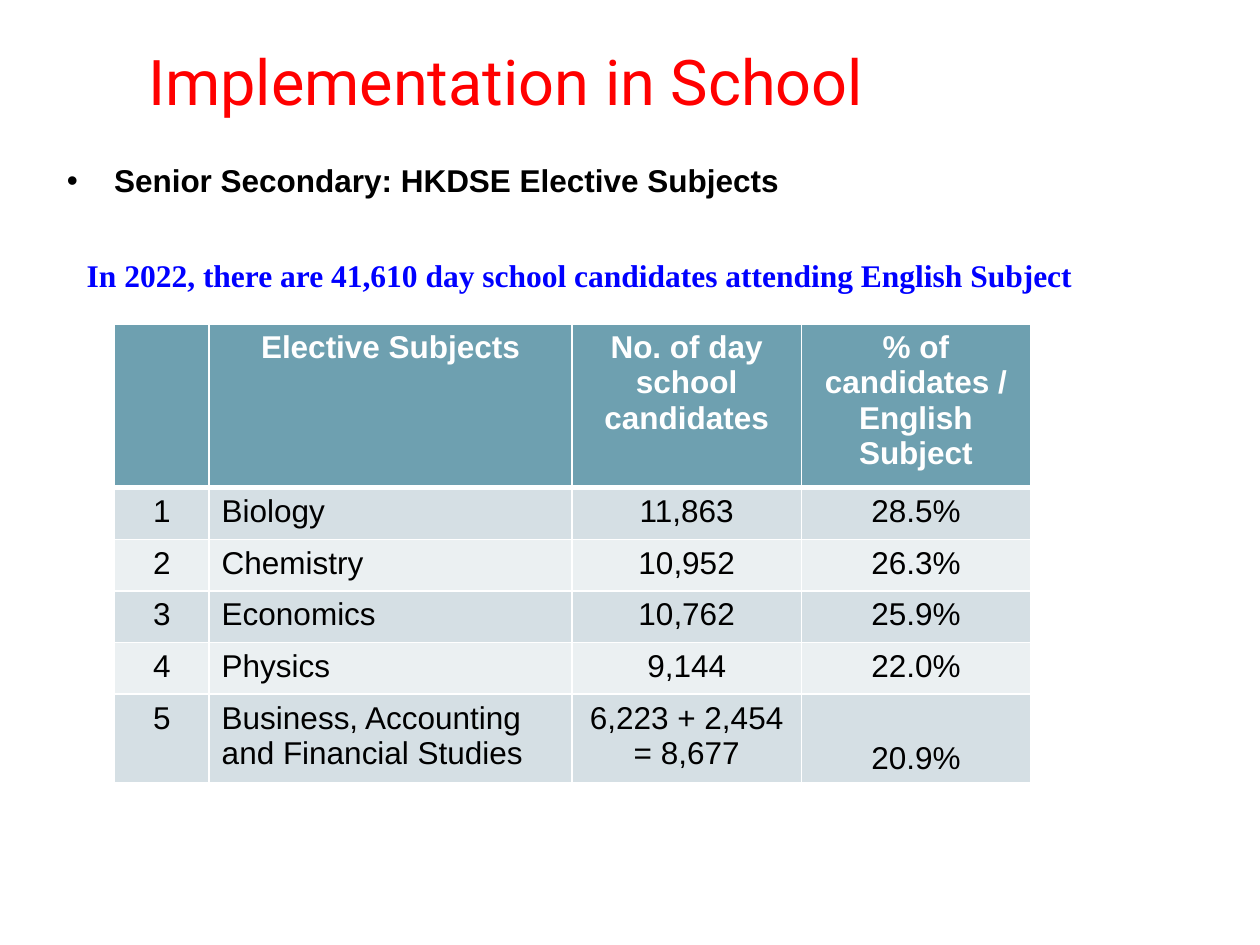
from lxml.etree import SubElement as Sub
from pptx import Presentation
from pptx.dml.color import RGBColor as RGB
from pptx.enum.text import MSO_ANCHOR as Anchor, MSO_AUTO_SIZE as Auto, PP_ALIGN as Align
from pptx.oxml.ns import qn
from pptx.util import Inches, Pt

# Content
TITLE = "Implementation in School"
LEAD = "Senior Secondary: HKDSE Elective Subjects"
NOTE = "In 2022, there are 41,610 day school candidates attending English Subject"
HEAD = ["", "Elective Subjects", "No. of day school candidates",
        "% of candidates / English Subject"]
ROWS = [
    ["1", "Biology", "11,863", "28.5%"],
    ["2", "Chemistry", "10,952", "26.3%"],
    ["3", "Economics", "10,762", "25.9%"],
    ["4", "Physics", "9,144", "22.0%"],
    ["5", "Business, Accounting and Financial Studies",
     "6,223 + 2,454\n= 8,677", "20.9%"],
]
WIDE = [0.75, 2.88, 1.82, 1.82]
HIGH = [1.29, 0.41, 0.41, 0.41, 0.41, 0.69]
COLOR = {"title": "FF0000", "text": "000000", "note": "0000FF", "white": "FFFFFF",
         "head": "6EA0B0", "odd": "D5DFE4", "even": "EBF0F2"}


def write(frame, text, size=18, font="Arial", color="text", bold=False,
          align=Align.LEFT, anchor=Anchor.TOP):
    frame.word_wrap = True
    frame.vertical_anchor = anchor
    frame.text = text
    for para in frame.paragraphs:
        para.alignment = align
        para.space_before = Pt(0)
        para.font.size = Pt(size)
        para.font.name = font
        para.font.bold = bold
        para.font.color.rgb = RGB.from_string(COLOR[color])


def place(shape, left, top, width, height):
    shape.left, shape.top = Inches(left), Inches(top)
    shape.width, shape.height = Inches(width), Inches(height)


def edge(cell, side, width):
    line = Sub(cell._tc.get_or_add_tcPr(), qn("a:ln" + side), w=str(Pt(width)))
    Sub(Sub(line, qn("a:solidFill")), qn("a:srgbClr"), val=COLOR["white"])


deck = Presentation()
deck.slide_width, deck.slide_height = Inches(10), Inches(7.5)
slide = deck.slides.add_slide(deck.slide_layouts[1])

# Title
title = slide.shapes.title
place(title, 0.35, 0.29, 7.33, 0.69)
write(title.text_frame, TITLE, size=36, font="Roboto", color="title",
      align=Align.CENTER, anchor=Anchor.MIDDLE)

# Subheading, without a bullet
body = slide.placeholders[1]
place(body, 0.43, 1.23, 9.3, 0.4)
props = body.text_frame.paragraphs[0]._p.get_or_add_pPr()
props.set("marL", "0")
props.set("indent", "0")
Sub(props, qn("a:buNone"))
write(body.text_frame, LEAD, bold=True)
body.text_frame.auto_size = Auto.SHAPE_TO_FIT_TEXT

# Table of electives
grid = slide.shapes.add_table(len(HIGH), len(WIDE), Inches(0.91), Inches(2.57),
                              Inches(sum(WIDE)), Inches(sum(HIGH))).table
for col, width in zip(grid.columns, WIDE):
    col.width = Inches(width)
for r, (row, texts) in enumerate(zip(grid.rows, [HEAD] + ROWS)):
    row.height = Inches(HIGH[r])
    head = r == 0
    fill = "head" if head else "odd" if r % 2 else "even"
    for c, text in enumerate(texts):
        cell = grid.cell(r, c)
        for side in "LRTB":
            thick = (r, side) in [(0, "B"), (1, "T")]
            edge(cell, side, 3 if thick else 1)
        cell.fill.solid()
        cell.fill.fore_color.rgb = RGB.from_string(COLOR[fill])
        write(cell.text_frame, text, color="white" if head else "text", bold=head,
              align=Align.LEFT if c == 1 and not head else Align.CENTER)
# The last share sits on the second line of its row
grid.cell(len(ROWS), 3).vertical_anchor = Anchor.BOTTOM

# Note above the table
note = slide.shapes.add_textbox(Inches(0.59), Inches(1.98), Inches(8.27), Inches(0.4))
write(note.text_frame, NOTE, font="Times New Roman", color="note", bold=True)
note.text_frame.auto_size = Auto.SHAPE_TO_FIT_TEXT

deck.save("out.pptx")
